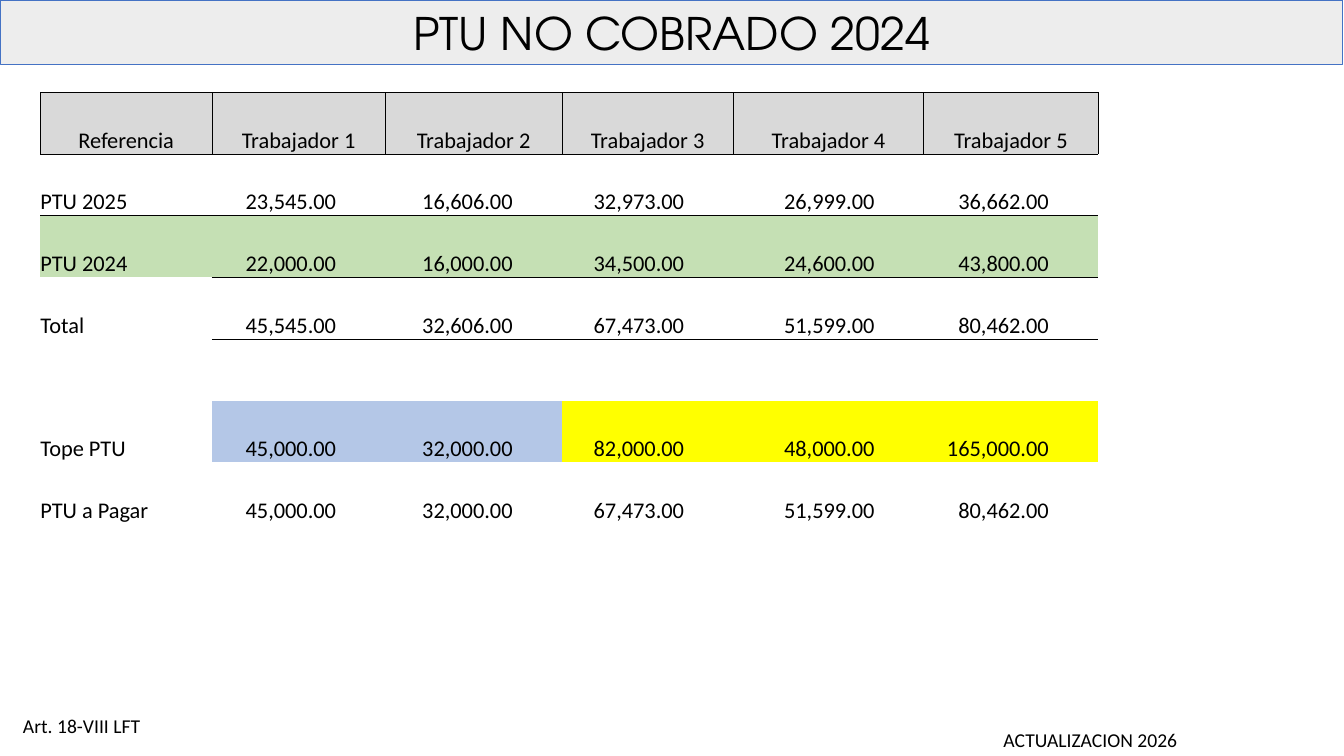
import pptx
import pptx.dml.color
import pptx.enum.text
import pptx.oxml
import pptx.oxml.ns
import pptx.util
from pptx.dml.color import RGBColor
from pptx.enum.text import MSO_ANCHOR, PP_ALIGN
from pptx.util import Cm

BLACK = RGBColor(0x00, 0x00, 0x00)
BANNER_FILL = RGBColor(0xED, 0xED, 0xED)
BANNER_LINE = RGBColor(0x44, 0x72, 0xC4)
HEADER_GRAY = RGBColor(0xD9, 0xD9, 0xD9)
GREEN = RGBColor(0xC5, 0xE0, 0xB4)
BLUE = RGBColor(0xB4, 0xC7, 0xE7)
YELLOW = RGBColor(0xFF, 0xFF, 0x00)

PLAIN_TABLE_STYLE = "{2D5ABB26-0587-4C30-8999-92F81FD0307C}"
COLUMN_WIDTHS = (4.32, 4.37, 4.45, 4.32, 4.8, 4.39)
AMOUNT_INDENT = Cm(1.24)

# Each row: texts, cell fills, and border sides of the label and the amounts.
TABLE_ROWS = [
    (["Referencia"] + [f"Trabajador {number}" for number in range(1, 6)],
     [HEADER_GRAY] * 6, "LRTB", "LRTB"),
    (["PTU 2025", "23,545.00", "16,606.00", "32,973.00", "26,999.00", "36,662.00"],
     [None] * 6, "T", "T"),
    (["PTU 2024", "22,000.00", "16,000.00", "34,500.00", "24,600.00", "43,800.00"],
     [GREEN] * 6, "", "B"),
    (["Total", "45,545.00", "32,606.00", "67,473.00", "51,599.00", "80,462.00"],
     [None] * 6, "", "T"),
    ([""] * 6, [None] * 6, "", ""),
    (["Tope PTU", "45,000.00", "32,000.00", "82,000.00", "48,000.00", "165,000.00"],
     [None] + [BLUE] * 2 + [YELLOW] * 3, "", ""),
    (["PTU a Pagar", "45,000.00", "32,000.00", "67,473.00", "51,599.00", "80,462.00"],
     [None] * 6, "", ""),
]


def write_text(text_frame, text, size, font_name="Calibri", alignment=PP_ALIGN.LEFT):
    paragraph = text_frame.paragraphs[0]
    paragraph.alignment = alignment
    run = paragraph.add_run()
    run.text = text
    run.font.size = pptx.util.Pt(size)
    run.font.name = font_name
    run.font.color.rgb = BLACK


def format_title(title):
    title.left, title.top, title.width, title.height = Cm(0.02), Cm(0), Cm(33.82), Cm(1.62)
    title.fill.solid()
    title.fill.fore_color.rgb = BANNER_FILL
    title.line.color.rgb = BANNER_LINE
    title.line.width = pptx.util.Pt(0.75)
    title.text_frame.vertical_anchor = MSO_ANCHOR.MIDDLE
    title.text_frame.auto_size = pptx.enum.text.MSO_AUTO_SIZE.NONE
    write_text(title.text_frame, "PTU NO COBRADO 2024", 32, "TeX Gyre Adventor",
               PP_ALIGN.CENTER)


def add_note(slide, text, left, top):
    text_box = slide.shapes.add_textbox(left, top, Cm(8.74), Cm(0.86))
    text_box.text_frame.word_wrap = True
    write_text(text_box.text_frame, text, 14)


def set_borders(cell, sides):
    """Draw thin black borders; sides holds letters in the order LRTB."""
    properties = cell._tc.get_or_add_tcPr()
    for position, side in enumerate(sides):
        border = pptx.oxml.parse_xml(
            f'<a:ln{side} {pptx.oxml.ns.nsdecls("a")} w="6350"><a:solidFill>'
            f'<a:srgbClr val="{BLACK}"/></a:solidFill></a:ln{side}>')
        properties.insert(position, border)


def format_cell(cell, text, fill, sides, alignment, right_margin):
    cell.margin_left = cell.margin_top = cell.margin_bottom = 0
    cell.margin_right = right_margin
    cell.vertical_anchor = MSO_ANCHOR.BOTTOM
    if fill is None:
        cell.fill.background()
    else:
        cell.fill.solid()
        cell.fill.fore_color.rgb = fill
    set_borders(cell, sides)
    if text:
        write_text(cell.text_frame, text, 16, alignment=alignment)


def add_ptu_table(slide):
    frame = slide.shapes.add_table(len(TABLE_ROWS), len(COLUMN_WIDTHS), Cm(1.02), Cm(2.33),
                                   Cm(sum(COLUMN_WIDTHS)), Cm(10.88))
    table = frame.table
    table.horz_banding = False
    style = table._tbl.tblPr.find(pptx.oxml.ns.qn("a:tableStyleId"))
    style.text = PLAIN_TABLE_STYLE
    for column, width in zip(table.columns, COLUMN_WIDTHS):
        column.width = Cm(width)
    for row, (texts, fills, label_sides, amount_sides) in enumerate(TABLE_ROWS):
        for column, (text, fill) in enumerate(zip(texts, fills)):
            alignment, right_margin = PP_ALIGN.LEFT, 0
            if row == 0:
                alignment = PP_ALIGN.CENTER
            elif column > 0:
                alignment, right_margin = PP_ALIGN.RIGHT, AMOUNT_INDENT
            sides = amount_sides if column else label_sides
            format_cell(table.cell(row, column), text, fill, sides, alignment, right_margin)


def main():
    presentation = pptx.Presentation()
    presentation.slide_width = Cm(33.87)
    presentation.slide_height = Cm(19.05)
    slide = presentation.slides.add_slide(presentation.slide_layouts[5])
    format_title(slide.shapes.title)
    add_note(slide, "ACTUALIZACION 2026", Cm(25.04), Cm(18.21))
    add_note(slide, "Art. 18-VIII LFT", Cm(0.33), Cm(17.86))
    add_ptu_table(slide)
    presentation.save("out.pptx")


if __name__ == "__main__":
    main()
